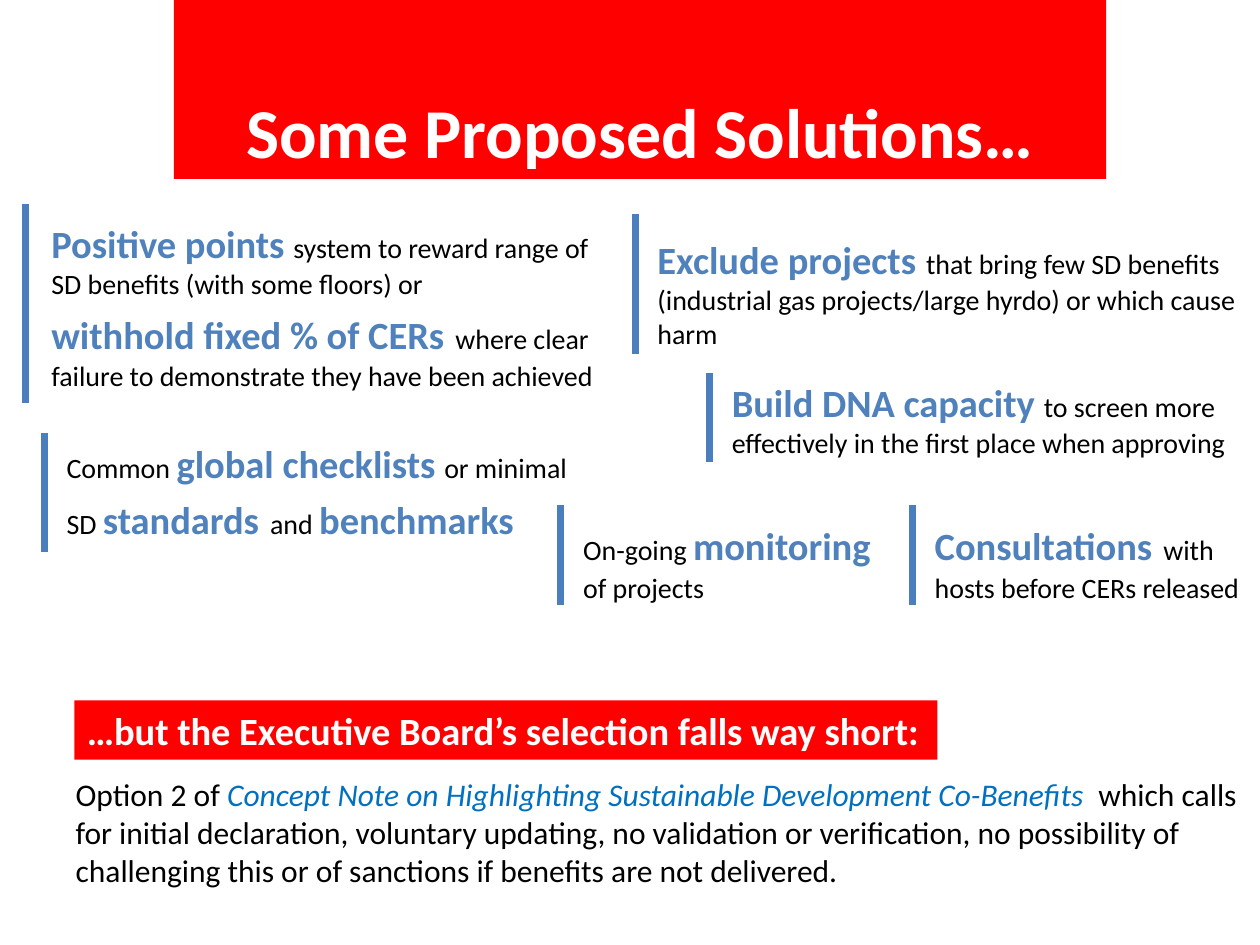
from pptx import Presentation
from pptx.dml.color import RGBColor
from pptx.enum.shapes import MSO_CONNECTOR
from pptx.enum.text import MSO_ANCHOR, MSO_AUTO_SIZE, PP_ALIGN
from pptx.oxml.ns import qn
from pptx.util import Inches, Pt
from lxml import etree

RED = RGBColor(0xFF, 0x00, 0x00)
WHITE = RGBColor(0xFF, 0xFF, 0xFF)
BLACK = RGBColor(0x00, 0x00, 0x00)
KEY_BLUE = RGBColor(0x4F, 0x81, 0xBD)
BAR_BLUE = RGBColor(0x4B, 0x7E, 0xBC)
NOTE_BLUE = RGBColor(0x00, 0x70, 0xC0)

# Run formats: size, colour, bold, italic
PLAIN = {"size": Pt(16), "color": BLACK, "bold": False, "italic": False}
KEY = {**PLAIN, "size": Pt(22), "color": KEY_BLUE, "bold": True}
GAP = {**PLAIN, "size": Pt(28)}
SMALL_GAP = {**PLAIN, "size": Pt(25)}
HEADING = {**PLAIN, "size": Pt(40), "color": WHITE, "bold": True}
VERDICT = {**HEADING, "size": Pt(22)}
BODY = {**PLAIN, "size": Pt(18)}
CITATION = {**BODY, "color": NOTE_BLUE, "italic": True}


def write(paragraph, runs):
    for text, style in runs:
        run = paragraph.add_run()
        run.text = text
        run.font.name = "Calibri"
        for attribute, value in style.items():
            if attribute == "color":
                run.font.color.rgb = value
            else:
                setattr(run.font, attribute, value)


def place(shape, left, top, width, height):
    shape.left, shape.top = Inches(left), Inches(top)
    shape.width, shape.height = Inches(width), Inches(height)


presentation = Presentation()
presentation.slide_width, presentation.slide_height = Inches(10), Inches(7.5)
slide = presentation.slides.add_slide(presentation.slide_layouts[1])

# Title banner
title = slide.shapes.title
place(title, 1.38, -0.03, 7.4, 1.45)
title.fill.solid()
title.fill.fore_color.rgb = RED
title.text_frame.auto_size = MSO_AUTO_SIZE.NONE
title.text_frame.vertical_anchor = MSO_ANCHOR.BOTTOM
heading = title.text_frame.paragraphs[0]
heading.alignment = PP_ALIGN.CENTER
write(heading, [("Some Proposed Solutions…", HEADING)])

# Closing explanation
explanation = slide.placeholders[1]
place(explanation, 0.12, 6.1, 9.8, 1.04)
explanation.text_frame.auto_size = MSO_AUTO_SIZE.NONE
option = explanation.text_frame.paragraphs[0]
write(option, [
    ("Option 2 of ", BODY),
    ("Concept Note on Highlighting Sustainable Development Co-Benefits  ", CITATION),
    ("which calls for initial declaration, voluntary updating, no validation or "
     "verification, no possibility of challenging this or of sanctions if "
     "benefits are not delivered.", BODY),
])
option_format = option._p.get_or_add_pPr()
option_format.set("marL", str(Inches(0.38)))
option_format.set("indent", "0")
etree.SubElement(option_format, qn("a:buNone"))

# Proposals: text box, bar (left, top, bottom), paragraphs of runs
proposals = [
    ((0.31, 1.7, 4.53, 1.48), (0.2, 1.62, 3.2), [
        [("Positive points ", KEY),
         ("system to reward range of SD benefits (with some floors) or", PLAIN)],
        [("withhold fixed % of CERs", KEY), (" ", GAP),
         ("where clear failure to demonstrate they have been achieved", PLAIN)]]),
    ((7.32, 4.01, 2.64, 0.84), (7.24, 4.01, 4.8), [
        [("Consultations", KEY), (" ", GAP),
         ("with hosts before CERs released", PLAIN)]]),
    ((0.43, 3.44, 4.41, 0.94), (0.35, 3.44, 4.38), [
        [("Common ", PLAIN), ("global checklists ", KEY),
         ("or minimal SD ", PLAIN), ("standards", KEY), (" ", GAP),
         ("and ", PLAIN), ("benchmarks", KEY)]]),
    ((5.12, 1.78, 5, 1.06), (5.04, 1.7, 2.81), [
        [("Exclude projects", KEY), (" ", SMALL_GAP),
         ("that bring few SD benefits (industrial gas projects/large hyrdo) "
          "or which cause harm", PLAIN)]]),
    ((4.53, 4.01, 2.68, 0.84), (4.45, 4.01, 4.8), [
        [("On-going ", PLAIN), ("monitoring", KEY), (" ", GAP),
         ("of projects", PLAIN)]]),
    ((5.71, 2.96, 4.41, 0.74), (5.63, 2.96, 3.67), [
        [("Build DNA capacity ", KEY),
         ("to screen more effectively in the first place when approving", PLAIN)]]),
]
for box, (bar_x, bar_top, bar_bottom), paragraphs in proposals:
    proposal = slide.shapes.add_group_shape()
    wording = proposal.shapes.add_textbox(*map(Inches, box))
    frame = wording.text_frame
    frame.word_wrap = True
    for index, runs in enumerate(paragraphs):
        write(frame.add_paragraph() if index else frame.paragraphs[0], runs)

    bar = proposal.shapes.add_connector(
        MSO_CONNECTOR.STRAIGHT, Inches(bar_x), Inches(bar_top),
        Inches(bar_x), Inches(bar_bottom))
    bar.line.color.rgb = BAR_BLUE
    bar.line.width = Pt(4)
    etree.SubElement(bar._element.spPr, qn("a:effectLst"))

# Verdict banner
verdict = slide.shapes.add_textbox(*map(Inches, (0.59, 5.56, 6.85, 0.47)))
verdict.fill.solid()
verdict.fill.fore_color.rgb = RED
verdict.text_frame.word_wrap = True
write(verdict.text_frame.paragraphs[0],
      [("…but the Executive Board’s selection falls way short:", VERDICT)])

presentation.save("out.pptx")
